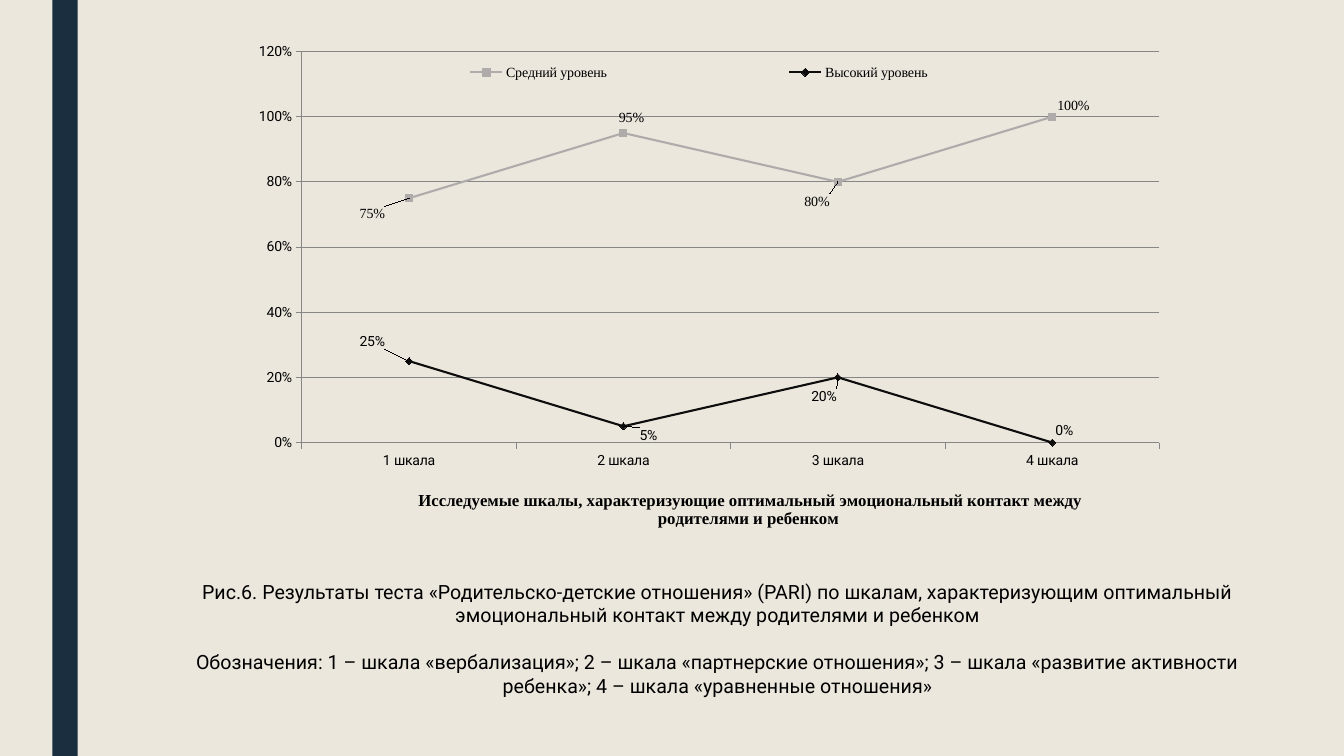
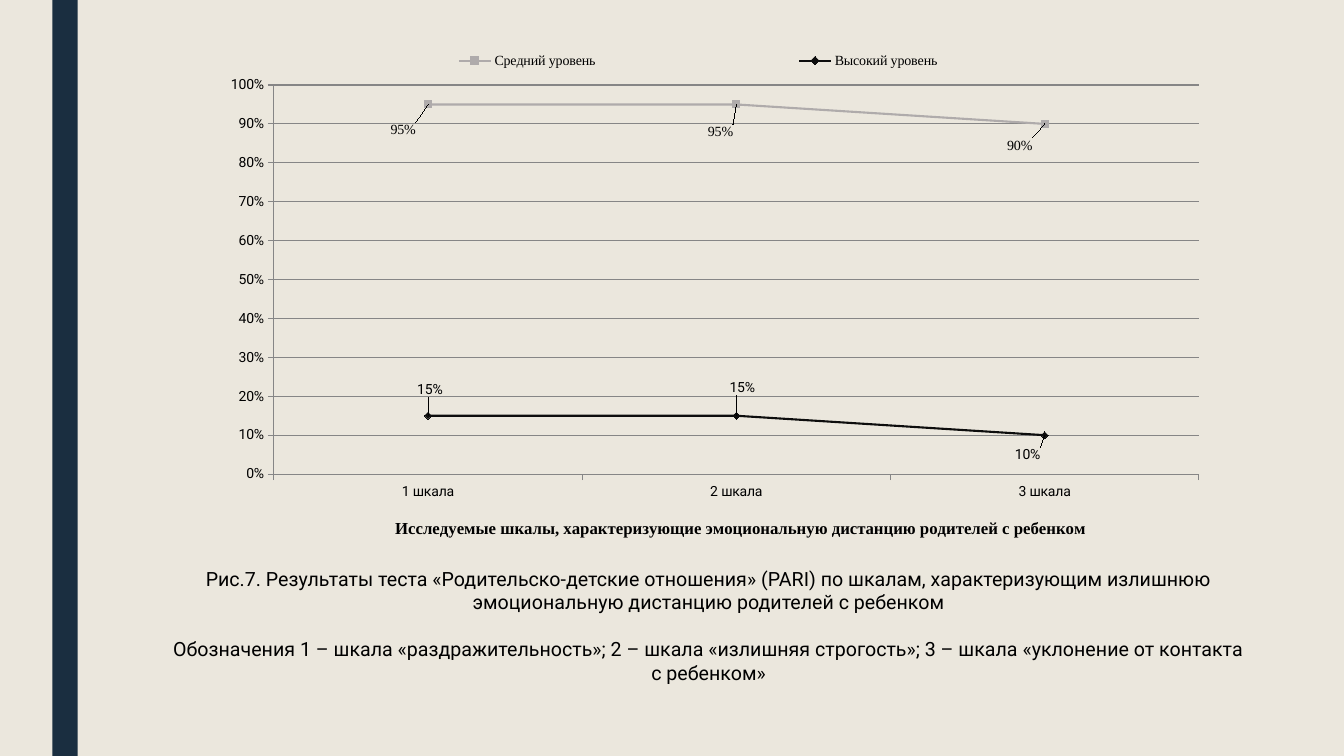
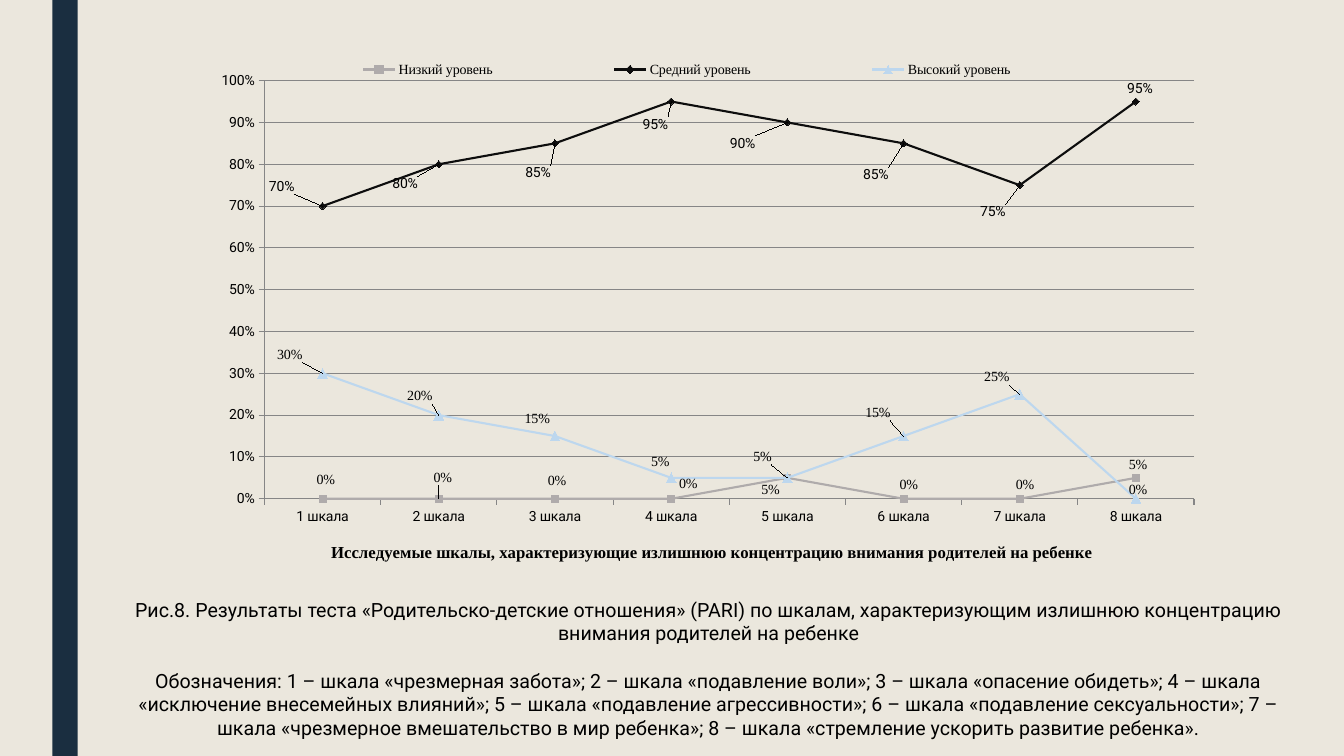
from lxml.etree import SubElement
from pptx import Presentation
from pptx.chart.data import CategoryChartData
from pptx.dml.color import RGBColor
from pptx.enum.chart import (XL_CHART_TYPE, XL_LABEL_POSITION, XL_LEGEND_POSITION,
                             XL_MARKER_STYLE, XL_TICK_MARK)
from pptx.enum.shapes import MSO_SHAPE
from pptx.enum.text import PP_ALIGN
from pptx.oxml.ns import qn
from pptx.util import Cm, Pt

BACKGROUND, BAND, INK, GRID = "EBE7DD", "1A2E40", "000000", "868686"
SANS, SERIF = "Roboto", "Times New Roman"

# line colour, marker colour, marker style, marker size, label font
GREY_SQUARES = ("AFABAB", "AFABAB", XL_MARKER_STYLE.SQUARE, 5, SERIF)
BLACK_DIAMONDS = ("0D0D0D", "000000", XL_MARKER_STYLE.DIAMOND, 5, SANS)
BLUE_TRIANGLES = ("BDD7EE", "BDD7EE", XL_MARKER_STYLE.TRIANGLE, 7, SERIF)

# Boxes are left, top, width, height in cm. Each level has a name, a look,
# values, and the shift of every label from its marker in cm.
FIGURES = [
    dict(
        chart_box=(5.94, 1.02, 23.83, 12.78), plot_area=(0.07, 0.022, 0.907, 0.771),
        legend_top=0.038, scale=(1.2, 0.2),
        axis_title="Исследуемые шкалы, характеризующие оптимальный эмоциональный контакт между "
                   "родителями и ребенком ", title_at=(0.19, 0.88),
        levels=[
            ("Средний уровень", GREY_SQUARES, (0.75, 0.95, 0.8, 1),
             [(-0.93, 0.4), (0.2, -0.38), (-0.53, 0.5), (0.53, -0.28)]),
            ("Высокий уровень", BLACK_DIAMONDS, (0.25, 0.05, 0.2, 0),
             [(-0.93, -0.5), (0.63, 0.23), (-0.35, 0.48), (0.3, -0.3)]),
        ],
        caption_box=(3.66, 14.48, 28.85, 3.25),
        caption=[
            "Рис.6. Результаты теста «Родительско-детские отношения» (PARI) по шкалам, "
            "характеризующим оптимальный эмоциональный контакт между родителями и ребенком",
            "Обозначения: 1 – шкала «вербализация»; 2 – шкала «партнерские отношения»; "
            "3 – шкала «развитие активности ребенка»; 4 – шкала «уравненные отношения»",
        ]),
    dict(
        chart_box=(5, 0.69, 25.7, 13.97), plot_area=(0.074, 0.104, 0.907, 0.702),
        legend_top=0.035, scale=(1, 0.1),
        axis_title="Исследуемые шкалы, характеризующие эмоциональную дистанцию родителей "
                   "с ребенком ", title_at=(0.19, 0.88),
        levels=[
            ("Средний уровень", GREY_SQUARES, (0.95, 0.95, 0.9),
             [(-0.63, 0.65), (-0.4, 0.7), (-0.63, 0.55)]),
            ("Высокий уровень", BLACK_DIAMONDS, (0.15, 0.15, 0.1),
             [(0.05, -0.65), (0.15, -0.7), (-0.43, 0.5)]),
        ],
        caption_box=(4.04, 14.15, 27.64, 3.43),
        caption=[
            "Рис.7. Результаты теста «Родительско-детские отношения» (PARI) по шкалам, "
            "характеризующим излишнюю эмоциональную дистанцию родителей с ребенком",
            "Обозначения 1 – шкала «раздражительность»; 2 – шкала «излишняя строгость»; "
            "3 – шкала «уклонение от контакта с ребенком»",
        ]),
    dict(
        chart_box=(4.65, 1.27, 25.83, 13.39), plot_area=(0.078, 0.057, 0.907, 0.787),
        legend_top=0.011, scale=(1, 0.1),
        axis_title="Исследуемые шкалы, характеризующие излишнюю концентрацию внимания "
                   "родителей на ребенке", title_at=(0.14, 0.92),
        levels=[
            ("Низкий уровень", GREY_SQUARES, (0, 0, 0, 0, 0.05, 0, 0, 0.05),
             [(0.08, -0.48), (0.1, -0.53), (0.05, -0.45), (0.43, -0.38),
              (-0.43, 0.3), (0.13, -0.35), (0.13, -0.35), (0.05, -0.33)]),
            ("Средний уровень", BLACK_DIAMONDS, (0.7, 0.8, 0.85, 0.95, 0.9, 0.85, 0.75, 0.95),
             [(-1.03, -0.5), (-0.85, 0.5), (-0.43, 0.75), (-0.4, 0.58),
              (-1.13, 0.53), (-0.7, 0.8), (-0.68, 0.68), (0.1, -0.33)]),
            ("Высокий уровень", BLUE_TRIANGLES, (0.3, 0.2, 0.15, 0.05, 0.05, 0.15, 0.25, 0),
             [(-0.83, -0.48), (-0.48, -0.48), (-0.45, -0.43), (-0.28, -0.4),
              (-0.63, -0.53), (-0.65, -0.58), (-0.58, -0.43), (0.05, -0.23)]),
        ],
        caption_box=(2.95, 14.94, 29.82, 3.84),
        caption=[
            "Рис.8. Результаты теста «Родительско-детские отношения» (PARI) по шкалам, "
            "характеризующим излишнюю концентрацию внимания родителей на ребенке",
            "Обозначения: 1 – шкала «чрезмерная забота»; 2 – шкала «подавление воли»; "
            "3 – шкала «опасение обидеть»; 4 – шкала «исключение внесемейных влияний»; "
            "5 – шкала «подавление агрессивности»; 6 – шкала «подавление сексуальности»; "
            "7 – шкала «чрезмерное вмешательство в мир ребенка»; "
            "8 – шкала «стремление ускорить развитие ребенка».",
        ]),
]


def paint(color_format, hex_color):
    """Set the colour of a solid fill, a line or a font."""
    if hasattr(color_format, "solid"):
        color_format.solid()
        color_format = color_format.fore_color
    elif hasattr(color_format, "color"):
        color_format = color_format.color
    color_format.rgb = RGBColor.from_string(hex_color)


def style_font(font, name, size, bold=False):
    font.name, font.size, font.bold = name, Pt(size), bold
    paint(font, INK)


def place_part(part, index, position, from_edge=True, inner=False):
    """Give a chart part a manual layout, in fractions of the chart."""
    for old_layout in part.findall(qn("c:layout")):
        part.remove(old_layout)
    layout = SubElement(part, qn("c:layout"))
    part.insert(index, layout)
    manual = SubElement(layout, qn("c:manualLayout"))
    settings = [("layoutTarget", "inner")] if inner else []
    if from_edge:
        settings += [("xMode", "edge"), ("yMode", "edge")]
    settings += zip("xywh", position)
    for tag, value in settings:
        SubElement(manual, qn(f"c:{tag}")).set("val", str(value))


def set_up_master(prs, slide):
    """Put the background and the side band on the master, via a first slide."""
    master = prs.slide_master
    paint(master.background.fill, BACKGROUND)
    band = slide.shapes.add_shape(MSO_SHAPE.RECTANGLE, Cm(1.32), 0, Cm(0.64), prs.slide_height)
    band.shadow.inherit = False
    paint(band.fill, BAND)
    band.line.fill.background()
    band.element.nvSpPr.cNvPr.set("id", "20")
    master.shapes.element.append(band.element)


def style_axes(chart, axis_title, scale):
    percent_axis, scale_axis = chart.value_axis, chart.category_axis
    percent_axis.minimum_scale = 0
    percent_axis.maximum_scale, percent_axis.major_unit = scale
    percent_axis.tick_labels.number_format = "0%"
    percent_axis.tick_labels.number_format_is_linked = False
    paint(percent_axis.major_gridlines.format.line, GRID)
    for axis in (percent_axis, scale_axis):
        axis.major_tick_mark = XL_TICK_MARK.OUTSIDE
        paint(axis.format.line, GRID)
    title_frame = scale_axis.axis_title.text_frame
    title_frame.text = axis_title
    style_font(title_frame.paragraphs[0].runs[0].font, SERIF, 12, bold=True)


def style_level(series, look, shifts, chart_size):
    line_color, marker_color, marker_style, marker_size, label_font = look
    series.smooth = False
    paint(series.format.line, line_color)
    series.format.line.width = Pt(1.5)
    series.marker.style, series.marker.size = marker_style, marker_size
    paint(series.marker.format.fill, marker_color)
    paint(series.marker.format.line, marker_color)
    labels = series.data_labels
    labels.show_value = True
    labels.number_format, labels.number_format_is_linked = "0%", False
    style_font(labels.font, label_font, 10)
    for index in range(len(shifts)):
        label = series.points[index].data_label
        label.position = XL_LABEL_POSITION.CENTER
        style_font(label.font, label_font, 10)
    for label, shift in zip(labels._element.findall(qn("c:dLbl")), shifts):
        fractions = [round(part / whole, 4) for part, whole in zip(shift, chart_size)]
        place_part(label, 1, fractions, from_edge=False)


def add_level_chart(slide, box, plot_area, legend_top, scale, axis_title, title_at, levels):
    chart_data = CategoryChartData(number_format="0%")
    chart_data.categories = [f"{number} шкала" for number in range(1, len(levels[0][2]) + 1)]
    for name, _, values, _ in levels:
        chart_data.add_series(name, values)
    chart = slide.shapes.add_chart(XL_CHART_TYPE.LINE_MARKERS, *map(Cm, box), chart_data).chart
    chart.has_title = False
    style_font(chart.font, SANS, 10)
    chart.plots[0].vary_by_categories = False
    style_axes(chart, axis_title, scale)

    chart.has_legend = True
    chart.legend.position = XL_LEGEND_POSITION.TOP
    chart.legend.include_in_layout = False
    style_font(chart.legend.font, SERIF, 10)

    for series, (_, look, _, shifts) in zip(chart.plots[0].series, levels):
        style_level(series, look, shifts, box[2:])

    find = chart.element.xpath
    place_part(find(".//c:plotArea")[0], 0, plot_area, inner=True)
    place_part(find(".//c:legend")[0], 1, (0.06, legend_top, 0.86, 0.05))
    place_part(find(".//c:catAx/c:title")[0], 1, title_at)


def add_caption(slide, box, lines):
    frame = slide.shapes.add_textbox(*map(Cm, box)).text_frame
    frame.word_wrap = True
    frame.text = "\n".join(lines)
    for paragraph in frame.paragraphs:
        paragraph.alignment = PP_ALIGN.CENTER
        style_font(paragraph.runs[0].font, SANS, 14)
    frame.paragraphs[-1].space_before = Pt(16.8)


def add_figure_slide(slide, chart_box, caption_box, caption, **chart_parts):
    add_level_chart(slide, chart_box, **chart_parts)
    add_caption(slide, caption_box, caption)


def main():
    prs = Presentation()
    prs.slide_width, prs.slide_height = Cm(33.87), Cm(19.05)
    slides = [prs.slides.add_slide(prs.slide_layouts[6]) for _ in FIGURES]
    set_up_master(prs, slides[0])
    for slide, figure in zip(slides, FIGURES):
        add_figure_slide(slide, **figure)
    prs.save("out.pptx")


if __name__ == "__main__":
    main()
